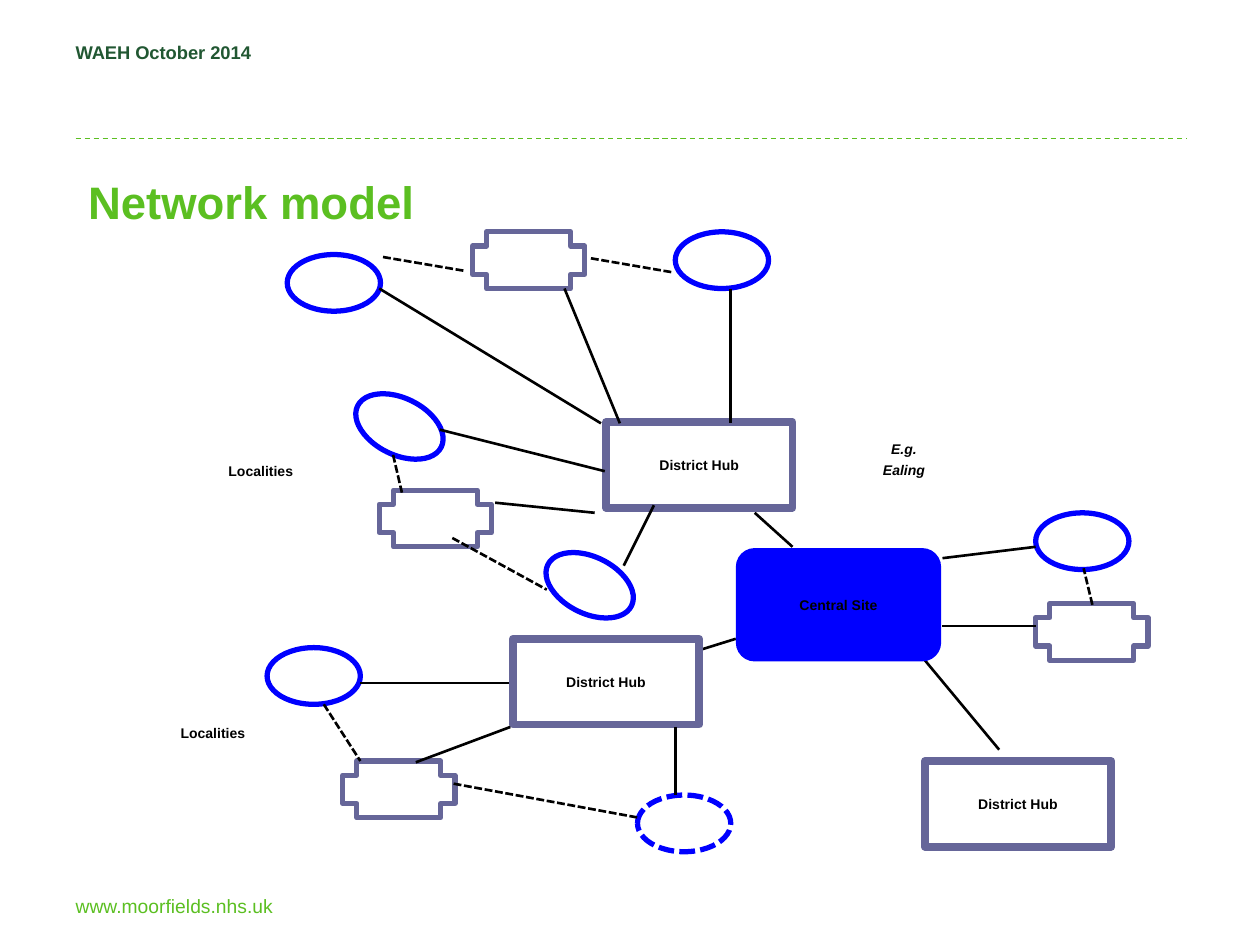
from pptx import Presentation
from pptx.dml.color import RGBColor
from pptx.enum.dml import MSO_LINE
from pptx.enum.shapes import MSO_CONNECTOR, MSO_SHAPE
from pptx.enum.text import MSO_ANCHOR, PP_ALIGN
from pptx.oxml.ns import qn
from pptx.util import Pt
from lxml import etree

PX = 9144
LEFT, CENTER = PP_ALIGN.LEFT, PP_ALIGN.CENTER
TOP, MIDDLE, BOTTOM = MSO_ANCHOR.TOP, MSO_ANCHOR.MIDDLE, MSO_ANCHOR.BOTTOM
DASH, SYS_DASH = MSO_LINE.DASH, MSO_LINE.SQUARE_DOT
STRAIGHT = MSO_CONNECTOR.STRAIGHT
OVAL, PLUS = MSO_SHAPE.OVAL, MSO_SHAPE.CROSS
RECT, ROUNDED = MSO_SHAPE.RECTANGLE, MSO_SHAPE.ROUNDED_RECTANGLE

COLORS = {
    "green": "5BBF21",
    "dark_green": "215732",
    "blue": "0000FF",
    "slate": "666699",
    "black": "000000",
}

CENTRAL_LINKS = [
    (599, 407, 629, 434), (584, 507, 555, 516), (793, 595, 734, 524),
]
HUB_LINKS = [
    (448, 229, 492, 336), (301, 229, 477, 336), (580, 229, 580, 336),
    (286, 542, 404, 542), (330, 605, 405, 577), (536, 577, 536, 631),
    (349, 341, 480, 374), (393, 399, 472, 407), (519, 401, 495, 449),
    (822, 434, 748, 443), (822, 497, 748, 497),
]
LOCAL_LINKS = [
    (360, 622, 507, 649), (257, 559, 286, 604), (359, 427, 434, 468),
    (312, 361, 319, 391), (469, 205, 533, 216), (304, 204, 369, 215),
    (867, 480, 860, 451),
]
SITES = [
    (536, 184, 0, None), (228, 202, 0, None), (280, 316, 26.2, None),
    (431, 442, 26.2, None), (212, 514, 0, None), (506, 631, 0, SYS_DASH),
    (822, 407, 0, None),
]
CROSSES = [(375, 184), (301, 389), (272, 604), (822, 479)]
HUBS = [(481, 335), (407, 507), (734, 604)]
LOCALITIES = [(96, 362), (58, 570)]


def rgb(name):
    """Return the palette colour with this name."""
    return RGBColor.from_string(COLORS[name])


def box(*lengths):
    """Turn pixel lengths into EMU."""
    return [n * PX for n in lengths]


def write(s, text, size=8, color="black", bold=True, italic=False,
          align=CENTER, anchor=TOP, inset=(10, 5), wrap=True, gap=0):
    """Write one paragraph per line of text into a shape."""
    tf = s.text_frame
    tf.word_wrap = wrap
    tf.vertical_anchor = anchor
    tf.margin_left = tf.margin_right = inset[0] * PX
    tf.margin_top = tf.margin_bottom = inset[1] * PX
    for i, line in enumerate(text.split("\n")):
        p = tf.add_paragraph() if i else tf.paragraphs[0]
        p.alignment = align
        if i:
            p.space_before = Pt(gap)
        r = p.add_run()
        r.text = line
        font = r.font
        font.name, font.size = "Arial", Pt(size)
        font.bold, font.italic = bold, italic
        font.color.rgb = rgb(color)


def add_text(slide, at, text, **fmt):
    """Add a text box."""
    write(slide.shapes.add_textbox(*box(*at)), text, **fmt)


def add_node(slide, kind, at, line=None, width=3, dash=None, fill=None,
             text=None, rotation=0):
    """Add an outlined or filled node with an optional centred label."""
    s = slide.shapes.add_shape(kind, *box(*at))
    s.shadow.inherit = False
    s.rotation = rotation
    if fill:
        s.fill.solid()
        s.fill.fore_color.rgb = rgb(fill)
    else:
        s.fill.background()
    if line:
        s.line.color.rgb = rgb(line)
        s.line.width = Pt(width)
        if dash:
            s.line.dash_style = dash
    else:
        s.line.fill.background()
    if text:
        write(s, text, anchor=MIDDLE)


def add_line(slide, ends, color="black", width=1.5, dash=None):
    """Add a straight line between two points."""
    s = slide.shapes.add_connector(STRAIGHT, *box(*ends))
    s.line.color.rgb = rgb(color)
    s.line.width = Pt(width)
    if dash:
        s.line.dash_style = dash
    etree.SubElement(s._element.spPr, qn("a:effectLst"))


def add_frame(slide):
    """Add the header, rule, title and footer."""
    add_line(slide, (60, 110, 942, 110), "green", 0.75, DASH)
    add_text(slide, (60, 709, 882, 19), "www.moorfields.nhs.uk", size=11,
             color="green", bold=False, align=LEFT, anchor=BOTTOM,
             inset=(0, 0))
    add_text(slide, (60, 33, 317, 22), "WAEH October 2014", size=10.5,
             color="dark_green", align=LEFT, inset=(0, 0))
    add_text(slide, (60, 133, 882, 44), "Network model", size=26,
             color="green", align=LEFT)


def add_network(slide):
    """Add the nodes, links and labels of the network."""
    for ends in CENTRAL_LINKS:
        add_line(slide, ends)
    for x, y in CROSSES:
        add_node(slide, PLUS, (x, y, 89, 45), "slate")
    for x, y, rotation, dash in SITES:
        add_node(slide, OVAL, (x, y, 74, 45), "blue", dash=dash,
                 rotation=rotation)
    add_node(slide, ROUNDED, (584, 435, 163, 90), fill="blue",
             text="Central Site")
    for x, y in HUBS:
        add_node(slide, RECT, (x, y, 148, 68), "slate", 4.5,
                 text="District Hub")
    for ends in HUB_LINKS:
        add_line(slide, ends)
    for ends in LOCAL_LINKS:
        add_line(slide, ends, dash=SYS_DASH)
    for x, y in LOCALITIES:
        add_text(slide, (x, y, 222, 36), "Localities")
    add_text(slide, (629, 345, 177, 45), "E.g.\nEaling", italic=True, gap=2)


def main():
    """Build and save the slide."""
    prs = Presentation()
    prs.slide_width, prs.slide_height = box(1000, 750)
    slide = prs.slides.add_slide(prs.slide_layouts[6])
    add_frame(slide)
    add_network(slide)
    prs.save("out.pptx")


if __name__ == "__main__":
    main()
